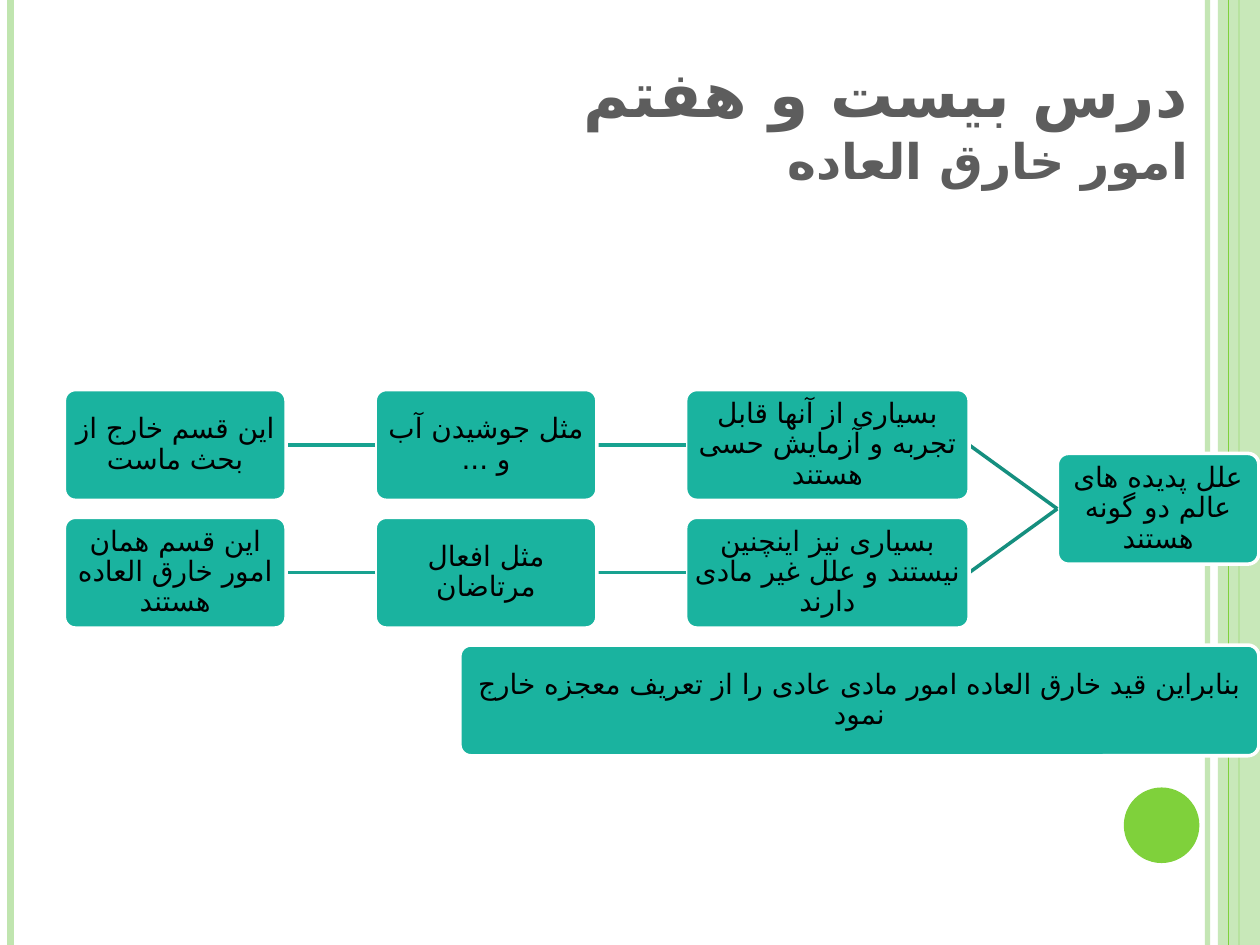
from lxml import etree
from pptx import Presentation
from pptx.dml.color import RGBColor
from pptx.enum.shapes import MSO_CONNECTOR, MSO_SHAPE
from pptx.enum.text import MSO_ANCHOR, MSO_AUTO_SIZE, PP_ALIGN
from pptx.oxml.ns import qn
from pptx.util import Pt

STRAIGHT = MSO_CONNECTOR.STRAIGHT
RECTANGLE, OVAL = MSO_SHAPE.RECTANGLE, MSO_SHAPE.OVAL
ROUNDED = MSO_SHAPE.ROUNDED_RECTANGLE
MIDDLE, BOTTOM = MSO_ANCHOR.MIDDLE, MSO_ANCHOR.BOTTOM
CENTER, RIGHT = PP_ALIGN.CENTER, PP_ALIGN.RIGHT
NO_FIT = MSO_AUTO_SIZE.NONE
LEFT_SIDE, RIGHT_SIDE = 1, 3

WIDTH, HEIGHT = 720, 540
PALE_GREEN, GREEN = "C0E5AF", "7FD13B"
TEAL, TEAL_LINK, DARK_LINK = "1AB39F", "18A290", "158F7F"
WHITE, BLACK, GREY = "FFFFFF", "000000", "5D5D5D"

# Tree: columns run from right to left
ROOT_LEFT, ROOT_WIDTH = 604.2, 115.2
COLUMNS = [(391.8, 162), (214.4, 126.7), (36.8, 126.7)]
ROW_TOP, ROW_STEP, BOX_HEIGHT = 222.6, 73, 63.3
ROOT_TEXT = "علل پدیده های عالم دو گونه هستند"
BRANCHES = [
    ["بسیاری از آنها قابل تجربه و آزمایش حسی هستند",
     "مثل جوشیدن آب و ...",
     "این قسم خارج از بحث ماست"],
    ["بسیاری نیز اینچنین نیستند و علل غیر مادی دارند",
     "مثل افعال مرتاضان",
     "این قسم همان امور خارق العاده هستند"],
]
CONCLUSION = "بنابراین قید خارق العاده امور مادی عادی را از تعریف معجزه خارج نمود"


def color(value):
    return RGBColor.from_string(value)


def apply(target, values):
    for name, value in values.items():
        setattr(target, name, value)


def set_alpha(fill_holder, percent):
    """Make the solid colour inside an XML element partly transparent."""
    tint = next(fill_holder.iter(qn("a:srgbClr")))
    etree.SubElement(tint, qn("a:alpha"), val=str(percent * 1000))


class Slide:
    """Holds the text style and the page being drawn."""

    font = "Cambria"
    arabic_font = "DejaVu Sans"

    def __init__(self, page):
        self.page = page

    def write_span(self, para, text, size, ink, bold=False):
        span = para.add_run()
        span.text = text
        apply(span.font, {"name": self.font, "size": Pt(size), "bold": bold})
        span.font.color.rgb = color(ink)
        etree.SubElement(span.font._element, qn("a:cs"),
                         typeface=self.arabic_font)

    def right_to_left(self, para, align):
        para.alignment = align
        para._p.get_or_add_pPr().set("rtl", "1")

    def title(self, left, top, width, height, lines):
        holder = self.page.shapes.title
        apply(holder, {"left": Pt(left), "top": Pt(top),
                       "width": Pt(width), "height": Pt(height)})
        apply(holder.text_frame, {"vertical_anchor": BOTTOM, "word_wrap": True,
                                  "auto_size": NO_FIT})
        para = holder.text_frame.paragraphs[0]
        self.right_to_left(para, RIGHT)
        for index, (text, size) in enumerate(lines):
            if index:
                para.add_line_break()
            self.write_span(para, text, size, GREY, bold=True)

    def shape(self, kind, left, top, width, height, fill, alpha=None):
        shape = self.page.shapes.add_shape(
            kind, Pt(left), Pt(top), Pt(width), Pt(height))
        shape.shadow.inherit = False
        shape.fill.solid()
        shape.fill.fore_color.rgb = color(fill)
        shape.line.fill.background()
        if alpha:
            set_alpha(shape._element.spPr, alpha)
        return shape

    def box(self, left, top, width, text):
        box = self.shape(ROUNDED, left, top, width, BOX_HEIGHT, TEAL)
        box.adjustments[0] = 0.1
        box.line.color.rgb = color(WHITE)
        box.line.width = Pt(2)
        inset = Pt(2.7)
        apply(box.text_frame, {
            "margin_left": inset, "margin_right": inset,
            "margin_top": 0, "margin_bottom": 0,
            "vertical_anchor": MIDDLE, "word_wrap": True})
        para = box.text_frame.paragraphs[0]
        para.line_spacing = 0.9
        self.right_to_left(para, CENTER)
        self.write_span(para, text, 16, BLACK)
        return box

    def line(self, start, end, ink, width, alpha=None):
        line = self.page.shapes.add_connector(
            STRAIGHT, *(Pt(length) for length in (*start, *end)))
        line.line.color.rgb = color(ink)
        line.line.width = Pt(width)
        if alpha:
            set_alpha(line._element.spPr, alpha)
        etree.SubElement(line._element.spPr, qn("a:effectLst"))
        return line

    def child_box(self, parent, ink, left, top, width, text):
        """Add a box joined to its parent, with the link behind the box."""
        link = self.line((0, 0), (0, 0), ink, 2)
        link.begin_connect(parent, LEFT_SIDE)
        child = self.box(left, top, width, text)
        link.end_connect(child, RIGHT_SIDE)
        return child


def draw_borders(slide):
    def stripe(x, ink, width, alpha=None):
        slide.line((x, 0), (x, HEIGHT), ink, width, alpha)

    stripe(690, PALE_GREEN, 3, 93)
    stripe(6, PALE_GREEN, 4.5)
    stripe(708, GREEN, 1.5)
    slide.shape(RECTANGLE, 696, 0, 24, HEIGHT, PALE_GREEN, 87)
    stripe(702, GREEN, 0.75)
    slide.shape(OVAL, 642.2, 450, 43.2, 43.2, GREEN)


def draw_tree(slide):
    root = slide.box(ROOT_LEFT, ROW_TOP + ROW_STEP / 2, ROOT_WIDTH, ROOT_TEXT)
    for row, texts in enumerate(BRANCHES):
        parent, ink = root, DARK_LINK
        for (left, width), text in zip(COLUMNS, texts):
            parent = slide.child_box(
                parent, ink, left, ROW_TOP + row * ROW_STEP, width, text)
            ink = TEAL_LINK
    slide.box(262.8, ROW_TOP + len(BRANCHES) * ROW_STEP, 456.6, CONCLUSION)


def main():
    deck = Presentation()
    apply(deck, {"slide_width": Pt(WIDTH), "slide_height": Pt(HEIGHT)})
    slide = Slide(deck.slides.add_slide(deck.slide_layouts[5]))
    draw_borders(slide)
    slide.title(98, 21.6, 588, 90,
                [("درس بیست و هفتم", 36), ("امور خارق العاده", 28)])
    draw_tree(slide)
    deck.save("out.pptx")


if __name__ == "__main__":
    main()
